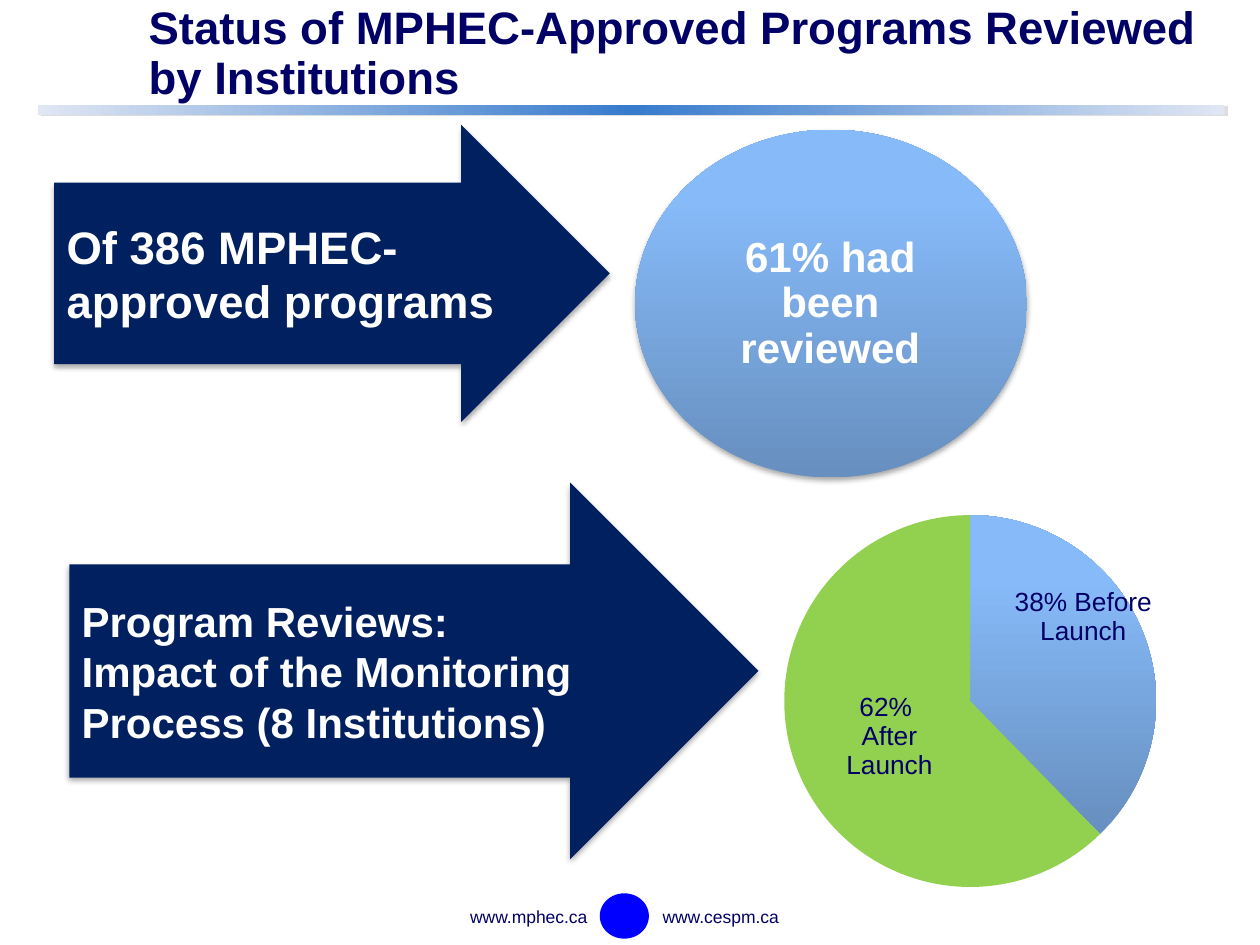
from dataclasses import dataclass

from lxml.etree import SubElement
from pptx import Presentation
from pptx.chart.data import CategoryChartData
from pptx.dml.color import RGBColor
from pptx.enum.chart import XL_CHART_TYPE, XL_LABEL_POSITION
from pptx.enum.shapes import MSO_SHAPE
from pptx.enum.text import MSO_ANCHOR, PP_ALIGN
from pptx.oxml import parse_xml
from pptx.oxml.ns import nsdecls, qn
from pptx.util import Pt

SCALE = 9144  # 100 px to the inch


@dataclass(frozen=True)
class Theme:
    font: str = "Arial"
    ink: str = "000066"
    white: str = "FFFFFF"
    navy: str = "002060"
    green: str = "92D050"
    badge: str = "0000FF"
    black: str = "000000"
    bar: tuple = ((0, "E0E6F3"), (50, "377BCD"), (100, "E0E6F3"))
    sky: tuple = ((0, "678FBF"), (80, "86BAF8"), (100, "85BBFB"))
    big: int = 26
    mid: int = 24
    label: int = 15
    small: int = 10


T = Theme()
# colour, opacity %, blur pt, distance pt, angle
SOFT = (T.black, 35, 3.1, 1.8, 90)
HARD = ("DDDDDD", 100, 0, 2.2, 27)

TITLE = "Status of MPHEC-Approved Programs Reviewed by Institutions"
ARROWS = [
    (["Of 386 MPHEC-approved programs"], (43, 99, 441, 236), 0.611, T.big),
    (["Program Reviews:", "Impact of the Monitoring", "Process (8 Institutions)"],
     (55, 383, 547, 299), 0.566, T.mid),
]
FOOTER = [
    ("www.mphec.ca", (295, 714, 181, 27), PP_ALIGN.RIGHT),
    ("www.cespm.ca", (516, 714, 125, 27), PP_ALIGN.LEFT),
]
# category, value, label, label shift as a part of the chart
SLICES = [
    ("1", 49, "38% Before Launch", (0.05, -0.12)),
    ("2", 81, "62% \nAfter Launch", (0.01, 0)),
]


def px(*sizes):
    return [round(size * SCALE) for size in sizes]


def style(font, size, color, bold=False):
    font.name, font.size, font.bold = T.font, Pt(size), bold
    font.color.rgb = RGBColor.from_string(color)


def write(shape, lines, size, color, bold=False, align=PP_ALIGN.LEFT,
          gap=None, inset=(10, 5)):
    frame = shape.text_frame
    frame.word_wrap = True
    frame.vertical_anchor = MSO_ANCHOR.MIDDLE
    frame.margin_left = frame.margin_right = px(inset[0])[0]
    frame.margin_top = frame.margin_bottom = px(inset[1])[0]
    frame.text = "\n".join(lines)
    for para in frame.paragraphs:
        para.alignment = align
        if gap:
            para.line_spacing = gap
        for run in para.runs:
            style(run.font, size, color, bold)


def blend(props, stops, angle):
    """Swap the solid fill of a shape or slice for a gradient."""
    marks = "".join(f'<a:gs pos="{at * 1000}"><a:srgbClr val="{color}"/></a:gs>'
                    for at, color in stops)
    grad = parse_xml(f'<a:gradFill rotWithShape="1" {nsdecls("a")}><a:gsLst>{marks}'
                     f'</a:gsLst><a:lin ang="{angle * 60000}" scaled="0"/></a:gradFill>')
    props.replace(props.find(qn("a:solidFill")), grad)


def draw(slide, kind, box, color, shade=None):
    shape = slide.shapes.add_shape(kind, *px(*box))
    shape.fill.solid()
    shape.fill.fore_color.rgb = RGBColor.from_string(color)
    shape.line.fill.background()
    shape.shadow.inherit = False
    if shade:
        tint, alpha, blur, dist, angle = shade
        cast = parse_xml(
            f'<a:outerShdw {nsdecls("a")} blurRad="{Pt(blur)}" dist="{Pt(dist)}" '
            f'dir="{angle * 60000}" algn="ctr" rotWithShape="0"><a:srgbClr val="{tint}">'
            f'<a:alpha val="{alpha * 1000}"/></a:srgbClr></a:outerShdw>')
        shape._element.spPr.find(qn("a:effectLst")).append(cast)
    return shape


def layout(**parts):
    node = parse_xml(f'<c:layout {nsdecls("c")}><c:manualLayout/></c:layout>')
    for name, val in parts.items():
        SubElement(node[0], qn(f"c:{name}")).set("val", str(val))
    return node


def add_pie(slide, box):
    data = CategoryChartData()
    data.categories = [row[0] for row in SLICES]
    data.add_series("Series 1", [row[1] for row in SLICES])
    chart = slide.shapes.add_chart(XL_CHART_TYPE.PIE, *px(*box), data).chart
    chart.has_legend = chart.has_title = False
    style(chart.font, T.small, T.ink)
    plot = chart.plots[0]
    plot.vary_by_categories = False
    for old in chart._chartSpace.xpath(".//c:plotArea/c:layout"):
        old.getparent().remove(old)
    chart._chartSpace.xpath(".//c:plotArea")[0].insert(0, layout(
        layoutTarget="inner", xMode="edge", yMode="edge",
        x=0.13, y=0.03, w=0.78, h=0.9))
    labels = plot.series[0].data_labels
    labels.show_value = True
    style(labels.font, T.label, T.ink, bold=True)
    for num, (_, _, text, (dx, dy)) in enumerate(SLICES):
        point = plot.series[0].points[num]
        point.format.fill.solid()
        point.format.fill.fore_color.rgb = RGBColor.from_string(T.green)
        point.format.line.fill.background()
        label = point.data_label
        label.text_frame.text = text
        for para in label.text_frame.paragraphs:
            for run in para.runs:
                style(run.font, T.label, T.ink)
        label.position = XL_LABEL_POSITION.CENTER
        node = chart._chartSpace.xpath(".//c:dLbl")[num]
        node.insert(1, layout(x=dx, y=dy))
    blend(chart._chartSpace.xpath(".//c:dPt/c:spPr")[0], T.sky, 270)


def main():
    deck = Presentation()
    deck.slide_width, deck.slide_height = px(1000, 750)
    slide = deck.slides.add_slide(deck.slide_layouts[5])

    title = slide.shapes.title
    title.left, title.top, title.width, title.height = px(108, 3, 863, 81)
    write(title, [TITLE], T.big, T.ink, bold=True, gap=0.9)

    bar = draw(slide, MSO_SHAPE.RECTANGLE, (30, 83, 942, 8), T.white, HARD)
    blend(bar._element.spPr, T.bar, 0)

    draw(slide, MSO_SHAPE.OVAL, (476, 709, 39, 36), T.badge)
    for text, box, align in FOOTER:
        link = slide.shapes.add_textbox(*px(*box))
        write(link, [text], T.small, T.ink, align=align)

    add_pie(slide, (547, 399, 429, 328))

    disc = draw(slide, MSO_SHAPE.OVAL, (504, 103, 311, 276), T.white, SOFT)
    blend(disc._element.spPr, T.sky, 270)
    share = slide.shapes.add_textbox(*px(549, 144, 220, 195))
    write(share, ["61% had been reviewed"], T.mid, T.white, bold=True,
          align=PP_ALIGN.CENTER, gap=0.9, inset=(0, 0))

    for lines, box, shaft, size in ARROWS:
        arrow = draw(slide, MSO_SHAPE.RIGHT_ARROW, box, T.navy, SOFT)
        arrow.adjustments[0], arrow.adjustments[1] = shaft, 0.5
        write(arrow, lines, size, T.white, bold=True)

    deck.save("out.pptx")


if __name__ == "__main__":
    main()
